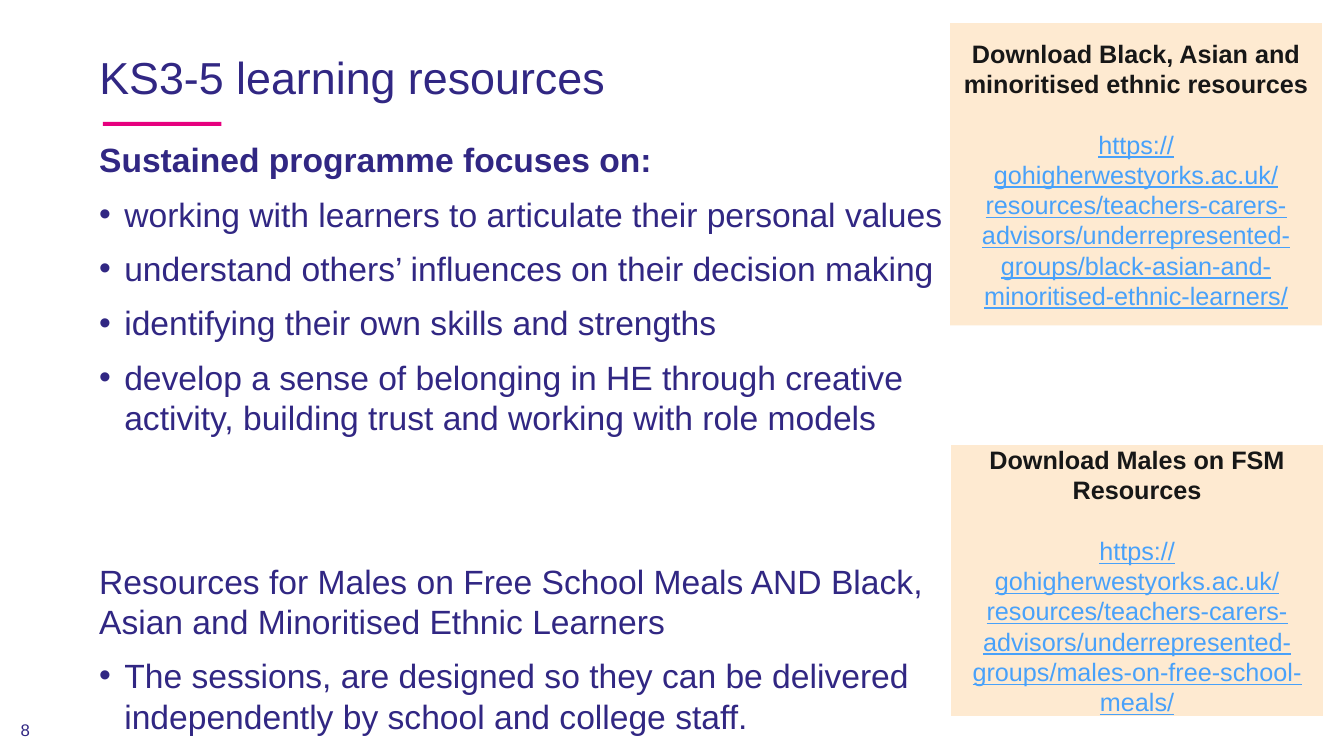
from dataclasses import dataclass

from lxml.etree import SubElement
from pptx import Presentation
from pptx.dml.color import RGBColor
from pptx.enum.shapes import MSO_SHAPE
from pptx.enum.text import MSO_ANCHOR, PP_ALIGN
from pptx.oxml.ns import qn
from pptx.util import Emu, Pt

PX = 9525


@dataclass(frozen=True)
class Theme:
    """Colours, font and type sizes of the slide."""
    font: str = "Arial"
    indigo: str = "312783"
    pink: str = "E6007E"
    cream: str = "FEEAD1"
    ink: str = "171717"
    link: str = "48A1FA"
    title: int = 32
    body: int = 24
    card: int = 18
    number: int = 12


THEME = Theme()


def place(box):
    """Turn a pixel box into EMU lengths."""
    return [Emu(value * PX) for value in box]


def set_frame(frame, anchor):
    """Make a text frame wrap and anchor its text."""
    frame.word_wrap = True
    frame.vertical_anchor = anchor


def add_bullet(paragraph, indent=24):
    """Give a paragraph a hanging bullet."""
    properties = paragraph._p.get_or_add_pPr()
    properties.set("marL", str(indent * PX))
    properties.set("indent", str(-indent * PX))
    SubElement(properties, qn("a:buFont"), typeface=THEME.font)
    SubElement(properties, qn("a:buChar"), char="•")


def write(frame, text, size, color=THEME.indigo, bold=False, underline=False,
          align=PP_ALIGN.LEFT, before=0, line=1.0, bullet=False):
    """Write one formatted paragraph, using the empty first one if there is one."""
    first = frame.paragraphs[0]
    paragraph = frame.add_paragraph() if first.runs else first
    paragraph.alignment = align
    paragraph.line_spacing = line
    paragraph.space_before = Pt(before)
    if bullet:
        add_bullet(paragraph)
    run = paragraph.add_run()
    run.text = text
    font = run.font
    font.name = THEME.font
    font.size = Pt(size)
    font.bold = bold
    font.underline = underline
    font.color.rgb = RGBColor.from_string(color)


def add_rectangle(slide, box, fill):
    """Add a flat rectangle without outline."""
    shape = slide.shapes.add_shape(MSO_SHAPE.RECTANGLE, *place(box))
    shape.shadow.inherit = False
    shape.fill.solid()
    shape.fill.fore_color.rgb = RGBColor.from_string(fill)
    shape.line.fill.background()
    return shape


def add_heading(slide, box, text):
    """Place the title and the accent rule below it."""
    left, top, width, height = box
    title = slide.shapes.title
    title.left, title.top, title.width, title.height = place(box)
    set_frame(title.text_frame, MSO_ANCHOR.BOTTOM)
    write(title.text_frame, text, THEME.title, line=0.9)
    add_rectangle(slide, (left + 13, top + height + 12, 113, 4), THEME.pink)


def add_body(slide, box, sections):
    """Place sections of a lead line followed by bullets."""
    frame = slide.shapes.add_textbox(*place(box)).text_frame
    set_frame(frame, MSO_ANCHOR.TOP)
    for index, (lead, bullets) in enumerate(sections):
        write(frame, lead, THEME.body, bold=index == 0, before=88 if index else 0)
        for text in bullets:
            write(frame, text, THEME.body, before=10, bullet=True)


def add_download_card(slide, box, heading, address):
    """Place a card with a heading and a web address."""
    frame = add_rectangle(slide, box, THEME.cream).text_frame
    set_frame(frame, MSO_ANCHOR.MIDDLE)
    write(frame, heading, THEME.card, THEME.ink, bold=True, align=PP_ALIGN.CENTER)
    write(frame, address, THEME.card, THEME.link, underline=True,
          align=PP_ALIGN.CENTER, before=21.6)


def add_page_number(slide, box, number):
    """Place the page number."""
    frame = slide.shapes.add_textbox(*place(box)).text_frame
    set_frame(frame, MSO_ANCHOR.MIDDLE)
    write(frame, number, THEME.number, align=PP_ALIGN.CENTER)


def main():
    """Build the slide and save it."""
    presentation = Presentation()
    presentation.slide_width, presentation.slide_height = place((1280, 720))
    slide = presentation.slides.add_slide(presentation.slide_layouts[5])
    add_heading(slide, (85, 36, 1110, 68), "KS3-5 learning resources")
    add_body(slide, (85, 128, 856, 510), [
        ("Sustained programme focuses on:", [
            "working with learners to articulate their personal values",
            "understand others’ influences on their decision making",
            "identifying their own skills and strengths",
            "develop a sense of belonging in HE through creative activity, "
            "building trust and working with role models",
        ]),
        ("Resources for Males on Free School Meals AND Black, Asian and "
         "Minoritised Ethnic Learners", [
             "The sessions, are designed so they can be delivered "
             "independently by school and college staff.",
         ]),
    ])
    groups = ("https://gohigherwestyorks.ac.uk/resources/teachers-carers-advisors/"
              "underrepresented-groups/")
    add_download_card(slide, (905, 22, 354, 288),
                      "Download Black, Asian and minoritised ethnic resources",
                      groups + "black-asian-and-minoritised-ethnic-learners/")
    add_download_card(slide, (906, 424, 354, 258), "Download Males on FSM Resources",
                      groups + "males-on-free-school-meals/")
    add_page_number(slide, (0, 678, 48, 34), "8")
    presentation.save("out.pptx")


if __name__ == "__main__":
    main()
